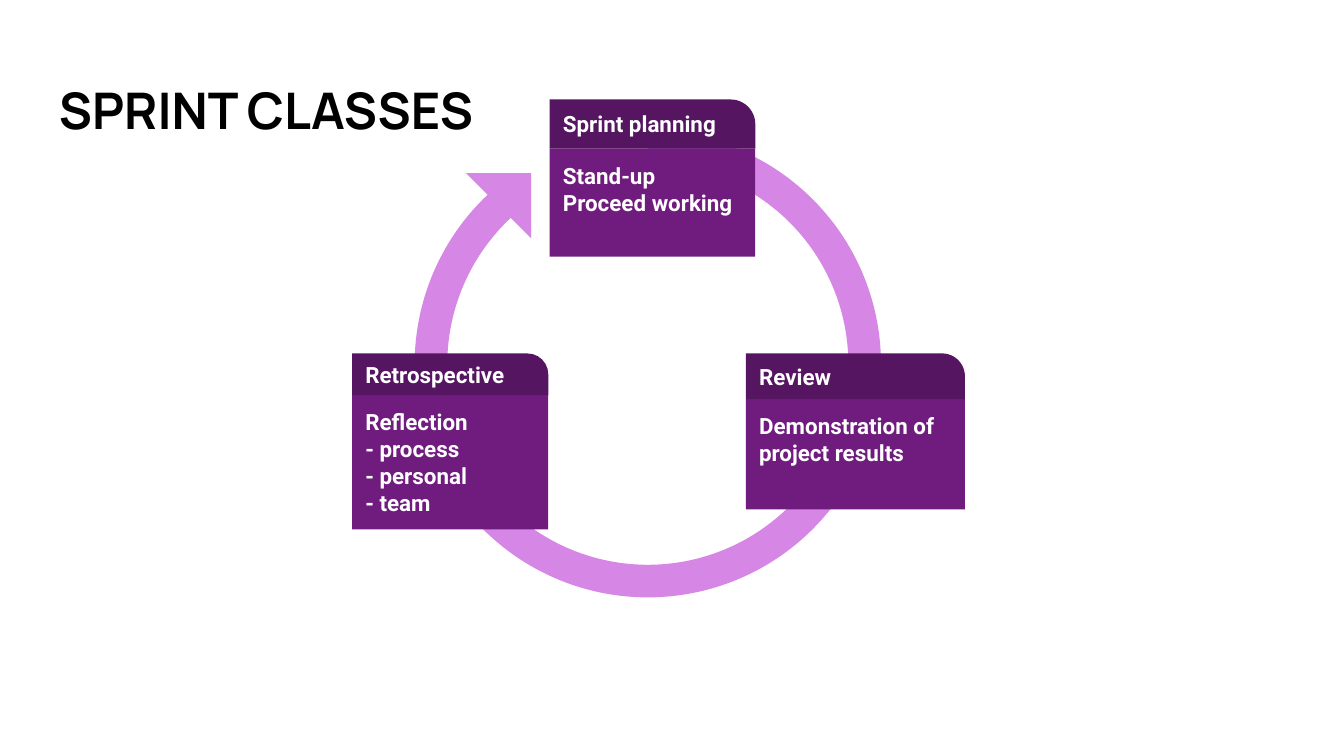
from dataclasses import dataclass

from pptx import Presentation
from pptx.dml.color import RGBColor
from pptx.enum.shapes import MSO_SHAPE
from pptx.enum.text import MSO_ANCHOR, PP_ALIGN
from pptx.util import Inches, Pt

ARC, WEDGE = MSO_SHAPE.BLOCK_ARC, MSO_SHAPE.RIGHT_TRIANGLE
RECT, TAB = MSO_SHAPE.RECTANGLE, MSO_SHAPE.ROUND_1_RECTANGLE
TOP, MIDDLE, LEFT = MSO_ANCHOR.TOP, MSO_ANCHOR.MIDDLE, PP_ALIGN.LEFT

COLS, ROWS = 100, 56.25
CELL = Inches(0.1)


@dataclass(frozen=True)
class Theme:
    ring: str = "D686E4"
    head: str = "551561"
    body: str = "701C7F"
    light: str = "FFFFFF"
    dark: str = "000000"
    title_font: str = "Manrope"
    card_font: str = "Roboto"
    title_size: int = 27
    card_size: int = 12


THEME = Theme()

# Box in grid cells (left, top, width, height), head height, head, body lines
CARDS = [
    ((40.9, 7.4, 15.3, 11.7), 3.65, "Sprint planning",
     ["Stand-up", "Proceed working"]),
    ((55.5, 26.3, 16.3, 11.6), 3.4, "Review",
     ["Demonstration of project results"]),
    ((26.2, 26.3, 14.6, 13.1), 3.1, "Retrospective",
     ["Reflection", "- process", "- personal", "- team"]),
]


def grid(box):
    return [round(n * CELL) for n in box]


def write(frame, lines, anchor, font, size, color):
    pad = CELL
    form = {"word_wrap": True, "vertical_anchor": anchor,
            "margin_left": pad, "margin_right": pad,
            "margin_top": pad, "margin_bottom": pad}
    for name, value in form.items():
        setattr(frame, name, value)
    for i, line in enumerate(lines):
        para = frame.add_paragraph() if i else frame.paragraphs[0]
        para.alignment = LEFT
        run = para.add_run()
        run.text = line
        for name, value in {"name": font, "size": Pt(size), "bold": True}.items():
            setattr(run.font, name, value)
        run.font.color.rgb = RGBColor.from_string(color)


def add_part(group, kind, box, color, turn=0, bends=()):
    part = group.shapes.add_shape(kind, *grid(box))
    part.shadow.inherit = False
    part.fill.solid()
    part.fill.fore_color.rgb = RGBColor.from_string(color)
    part.line.fill.background()
    part.rotation = turn
    for i, bend in enumerate(bends):
        part.adjustments[i] = bend
    return part


def add_title(slide, box, text):
    frame = slide.shapes.add_textbox(*grid(box)).text_frame
    write(frame, [text], TOP, THEME.title_font, THEME.title_size, THEME.dark)


def add_ring(slide, box):
    """Draw an open ring whose arrowhead closes the cycle at the upper left."""
    left, top, width, _ = box
    group = slide.shapes.add_group_shape()
    add_part(group, ARC, box, THEME.ring, 180, (54, 30.13, 0.07))
    side = 0.14 * width
    tip = (left + 0.11 * width, top + 0.09 * width, side, side)
    add_part(group, WEDGE, tip, THEME.ring, 180)


def add_card(slide, box, split, head, lines):
    left, top, width, height = box
    group = slide.shapes.add_group_shape()
    parts = [
        (RECT, top + split, height - split, THEME.body, lines, TOP, ()),
        (TAB, top, split, THEME.head, [head], MIDDLE, (0.5,)),
    ]
    for kind, y, tall, color, words, anchor, bends in parts:
        part = add_part(group, kind, (left, y, width, tall), color, bends=bends)
        write(part.text_frame, words, anchor,
              THEME.card_font, THEME.card_size, THEME.light)


def main():
    deck = Presentation()
    deck.slide_width, deck.slide_height = grid((COLS, ROWS))
    slide = deck.slides.add_slide(deck.slide_layouts[6])
    add_title(slide, (3.4, 4.9, 93.2, 6.8), "SPRINT CLASSES")
    add_ring(slide, (30.85, 9.75, 34.7, 34.7))
    for card in CARDS:
        add_card(slide, *card)
    deck.save("out.pptx")


if __name__ == "__main__":
    main()
